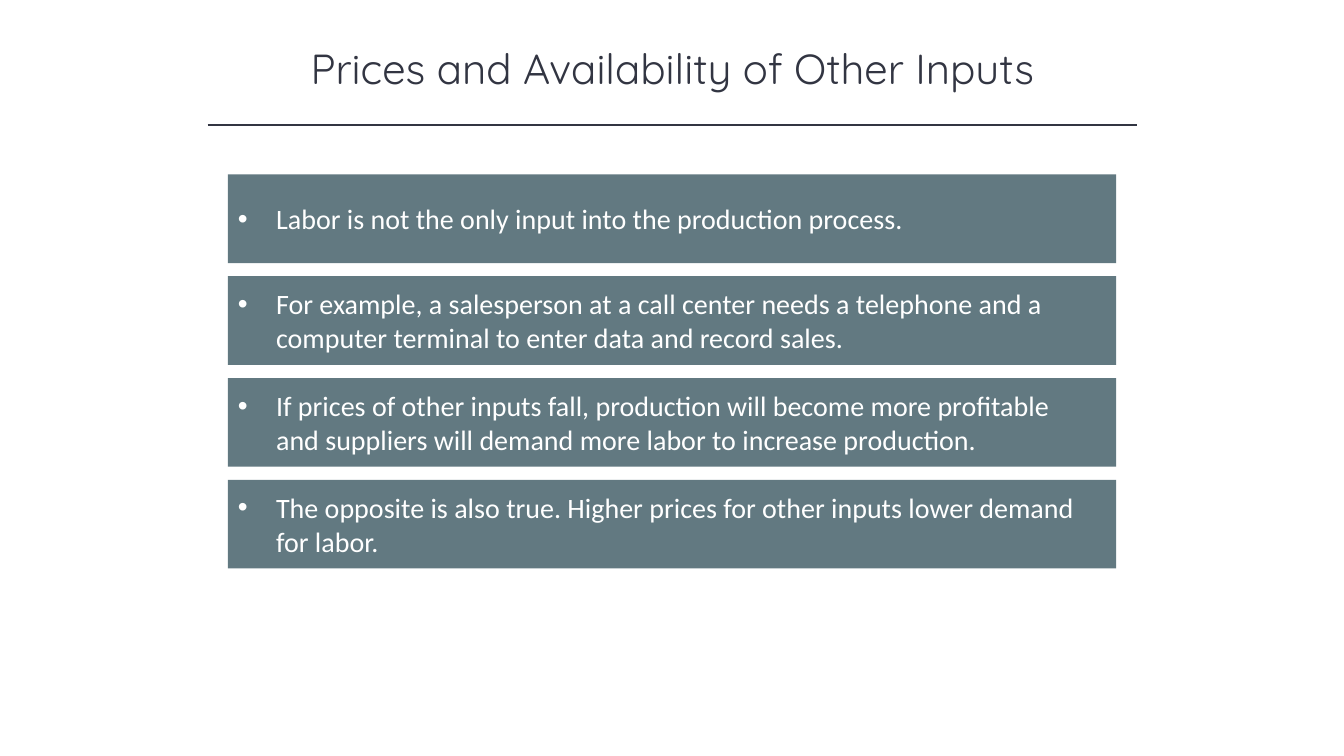
from lxml import etree
from pptx import Presentation
from pptx.dml.color import RGBColor
from pptx.enum.shapes import MSO_CONNECTOR, MSO_SHAPE
from pptx.enum.text import MSO_ANCHOR, PP_ALIGN
from pptx.oxml.ns import qn
from pptx.util import Inches, Pt

STRAIGHT = MSO_CONNECTOR.STRAIGHT
RECTANGLE = MSO_SHAPE.RECTANGLE
MIDDLE = MSO_ANCHOR.MIDDLE
CENTER = PP_ALIGN.CENTER
LEFT = PP_ALIGN.LEFT

INK = "323542"
SLATE = "627981"
WHITE = "FFFFFF"

TITLE = "Prices and Availability of Other Inputs"
POINTS = [
    "Labor is not the only input into the production process.",
    "For example, a salesperson at a call center needs a telephone and a "
    "computer terminal to enter data and record sales.",
    "If prices of other inputs fall, production will become more profitable "
    "and suppliers will demand more labor to increase production.",
    "The opposite is also true. Higher prices for other inputs lower demand "
    "for labor.",
]
FIRST_BAND_TOP = 1.73
BAND_PITCH = 1.01


def rgb(color):
    return RGBColor.from_string(color)


def write(frame, text, font_name, size, color, alignment):
    frame.word_wrap = True
    frame.text = text
    paragraph = frame.paragraphs[0]
    paragraph.alignment = alignment
    font = paragraph.runs[0].font
    font.name = font_name
    font.size = Pt(size)
    font.color.rgb = rgb(color)
    return paragraph


def add_bullet(paragraph):
    properties = paragraph._p.get_or_add_pPr()
    properties.set("marL", str(Inches(0.38)))
    properties.set("indent", str(Inches(-0.38)))
    etree.SubElement(properties, qn("a:buFont"), typeface="Arial")
    etree.SubElement(properties, qn("a:buChar"), char="•")


def add_title(slide):
    title = slide.shapes.add_textbox(
        Inches(1.67), Inches(0.37), Inches(10), Inches(0.61))
    write(title.text_frame, TITLE, "Quicksand", 30, INK, CENTER)


def add_rule(slide):
    rule = slide.shapes.add_connector(
        STRAIGHT, Inches(2.06), Inches(1.24), Inches(11.28), Inches(1.24))
    rule.line.color.rgb = rgb(INK)
    rule.line.width = Pt(1)
    etree.SubElement(rule._element.spPr, qn("a:effectLst"))


def add_band(slide, top, point):
    band = slide.shapes.add_shape(
        RECTANGLE, Inches(2.26), Inches(top), Inches(8.81), Inches(0.88))
    band.shadow.inherit = False
    band.fill.solid()
    band.fill.fore_color.rgb = rgb(SLATE)
    band.line.fill.background()
    frame = band.text_frame
    frame.vertical_anchor = MIDDLE
    frame.margin_right = Inches(0.37)
    add_bullet(write(frame, point, "Calibri", 20, WHITE, LEFT))


def main():
    presentation = Presentation()
    presentation.slide_width = Inches(13.33)
    presentation.slide_height = Inches(7.5)
    slide = presentation.slides.add_slide(presentation.slide_layouts[6])
    add_title(slide)
    add_rule(slide)
    for index, point in enumerate(POINTS):
        add_band(slide, FIRST_BAND_TOP + index * BAND_PITCH, point)
    presentation.save("out.pptx")


if __name__ == "__main__":
    main()
